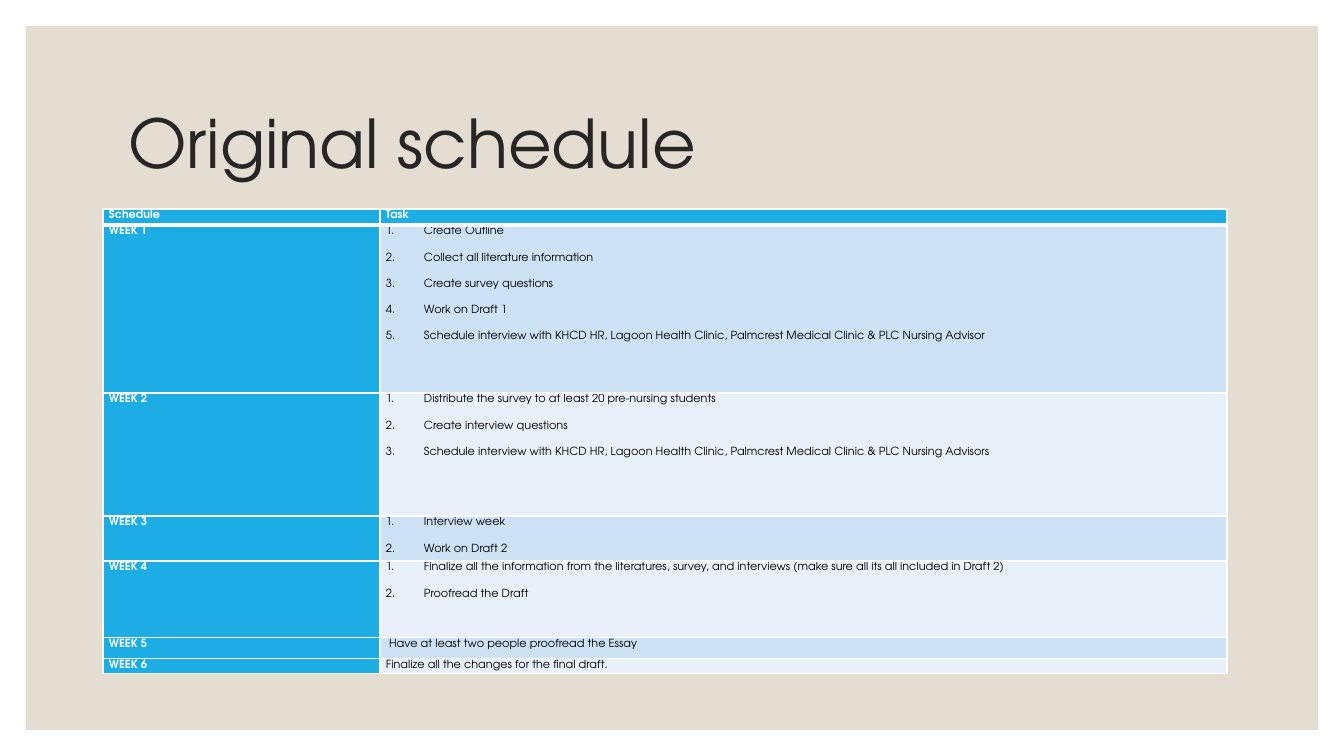
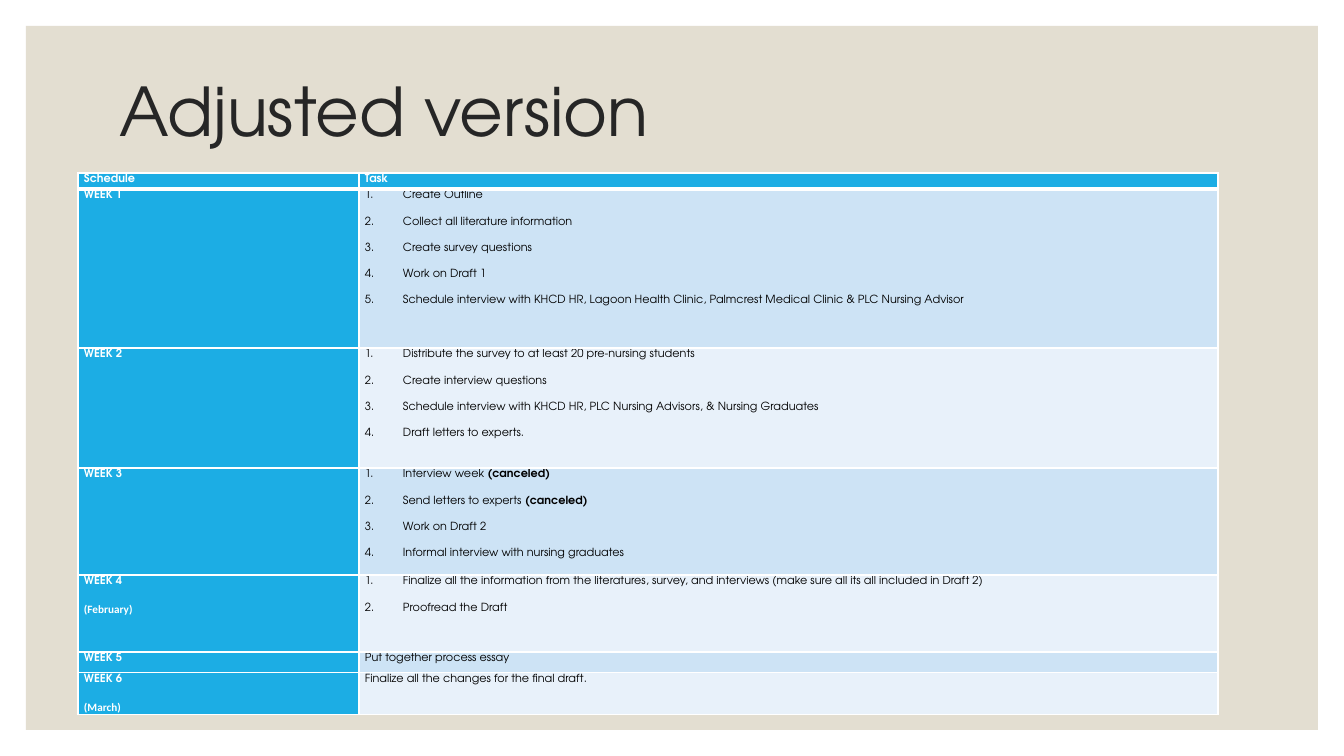
"""Build two slides that show a six-week essay schedule before and after a change."""
from dataclasses import dataclass

from lxml import etree
from pptx import Presentation
from pptx.dml.color import RGBColor
from pptx.enum.shapes import MSO_SHAPE
from pptx.enum.text import MSO_ANCHOR, MSO_AUTO_SIZE, PP_ALIGN
from pptx.oxml.ns import qn
from pptx.util import Pt

RECT = MSO_SHAPE.RECTANGLE
MIDDLE = MSO_ANCHOR.MIDDLE
TOP = MSO_ANCHOR.TOP
LEFT = PP_ALIGN.LEFT
FIXED = MSO_AUTO_SIZE.NONE
TITLE_ONLY = 5
SCALE = 914400 / 100.8


@dataclass(frozen=True)
class Theme:
    """Colours, fonts and type sizes."""
    panel: str = "E3DED1"
    ink: str = "262626"
    text: str = "000000"
    white: str = "FFFFFF"
    head: str = "1CADE4"
    bands: tuple = ("CDE3F5", "E8F1FA")
    face: str = "TeX Gyre Adventor"
    month: str = "Calibri"
    title: int = 48
    body: int = 8
    thin: int = 1
    thick: int = 3


def px(n):
    """Turn pixels into EMU."""
    return round(n * SCALE)


def rgb(code):
    """Turn a hex code into a colour."""
    return RGBColor.from_string(code)


class Deck:
    """Holds the style and the current slide."""

    def __init__(self, theme):
        """Start a presentation with the panel on its layout."""
        self.theme = theme
        self.prs = Presentation()
        self.prs.slide_width, self.prs.slide_height = px(1344), px(756)
        self.layout = self.prs.slide_layouts[TITLE_ONLY]
        self.slide = None
        self.panelled = False

    def page(self):
        """Add a slide."""
        self.slide = self.prs.slides.add_slide(self.layout)
        if not self.panelled:
            self.panel(26, 26, 1292, 704)
            self.panelled = True

    def panel(self, x, y, w, h):
        """Draw the backing panel and move it to the layout."""
        shape = self.slide.shapes.add_shape(RECT, px(x), px(y), px(w), px(h))
        shape.shadow.inherit = False
        shape.fill.solid()
        shape.fill.fore_color.rgb = rgb(self.theme.panel)
        shape.line.fill.background()
        self.layout.shapes.element.insert(2, shape.element)

    def style(self, font, size, color, bold=False, face=None):
        """Format a font."""
        font.name = face or self.theme.face
        font.size = Pt(size)
        font.color.rgb = rgb(color)
        font.bold = bold

    def title(self, text, x, y):
        """Fill and place the title."""
        box = self.slide.shapes.title
        box.left, box.top, box.width, box.height = px(x), px(y), px(1109), px(151)
        frame = box.text_frame
        frame.text = text
        frame.word_wrap = True
        frame.auto_size = FIXED
        frame.vertical_anchor = MIDDLE
        par = frame.paragraphs[0]
        par.alignment = LEFT
        par.line_spacing = 0.9
        self.style(par.font, self.theme.title, self.theme.ink)

    def border(self, cell, top, base):
        """Draw the four white sides of a cell."""
        props = cell._tc.get_or_add_tcPr()
        thin = self.theme.thin
        for tag, width in (("lnL", thin), ("lnR", thin), ("lnT", top), ("lnB", base)):
            line = etree.SubElement(props, qn("a:" + tag), w=str(Pt(width)))
            fill = etree.SubElement(line, qn("a:solidFill"))
            etree.SubElement(fill, qn("a:srgbClr"), val=self.theme.white)

    def number(self, par):
        """Number a paragraph with a hanging indent."""
        props = par._p.get_or_add_pPr()
        props.set("marL", str(px(38)))
        props.set("indent", str(-px(38)))
        etree.SubElement(props, qn("a:buAutoNum"), type="arabicPeriod")

    def words(self, cell, items, color, bold=False, listed=False):
        """Set the paragraphs of a cell, with what follows a | in bold."""
        frame = cell.text_frame
        for i, item in enumerate(items):
            par = frame.add_paragraph() if i else frame.paragraphs[0]
            if listed:
                self.number(par)
            par.line_spacing = 1.15
            par.space_after = Pt(10)
            face = self.theme.month if bold and i else None
            self.style(par.font, self.theme.body, color, bold, face)
            plain, _, strong = item.partition("|")
            par.add_run().text = plain
            if strong:
                run = par.add_run()
                run.text = strong
                run.font.bold = True

    def cell(self, cell, fill, top, base):
        """Set the margins, sides and fill of a cell."""
        cell.margin_left = cell.margin_right = px(6)
        cell.margin_top = cell.margin_bottom = 0
        cell.vertical_anchor = TOP
        self.border(cell, top, base)
        cell.fill.solid()
        cell.fill.fore_color.rgb = rgb(fill)

    def table(self, x, y, cols, highs, weeks):
        """Draw the schedule, one row a week under a header."""
        look = self.theme
        rows = [(["Schedule"], ["Task"])] + weeks
        frame = self.slide.shapes.add_table(
            len(rows), len(cols), px(x), px(y), px(sum(cols)), px(sum(highs)))
        grid = frame.table
        grid.first_col = True
        grid.horz_banding = False
        for col, wide in zip(grid.columns, cols):
            col.width = px(wide)
        for i, (high, (week, tasks)) in enumerate(zip(highs, rows)):
            grid.rows[i].height = px(high)
            top = look.thick if i == 1 else look.thin
            base = look.thin if i else look.thick
            band = look.bands[(i - 1) % 2] if i else look.head
            left, right = grid.cell(i, 0), grid.cell(i, 1)
            self.cell(left, look.head, top, base)
            self.cell(right, band, top, base)
            self.words(left, week, look.white, True)
            self.words(right, tasks, look.text if i else look.white,
                       not i, len(tasks) > 1)


START = (["WEEK 1"], [
    "Create Outline",
    "Collect all literature information",
    "Create survey questions",
    "Work on Draft 1",
    "Schedule interview with KHCD HR, Lagoon Health Clinic, "
    "Palmcrest Medical Clinic & PLC Nursing Advisor",
])
SURVEY = [
    "Distribute the survey to at least 20 pre-nursing students",
    "Create interview questions",
]
REVIEW = [
    "Finalize all the information from the literatures, survey, and interviews "
    "(make sure all its all included in Draft 2)",
    "Proofread the Draft",
]
FINAL = ["Finalize all the changes for the final draft."]

FIRST = [
    START,
    (["WEEK 2"], SURVEY + [
        "Schedule interview with KHCD HR, Lagoon Health Clinic, "
        "Palmcrest Medical Clinic & PLC Nursing Advisors"]),
    (["WEEK 3"], ["Interview week", "Work on Draft 2"]),
    (["WEEK 4"], REVIEW),
    (["WEEK 5"], [" Have at least two people proofread the Essay"]),
    (["WEEK 6"], FINAL),
]
SECOND = [
    START,
    (["WEEK 2"], SURVEY + [
        "Schedule interview with KHCD HR, PLC Nursing Advisors, & Nursing Graduates",
        "Draft letters to experts."]),
    (["WEEK 3"], [
        "Interview week |(canceled)",
        "Send letters to experts |(canceled)",
        "Work on Draft 2",
        "Informal interview with nursing graduates"]),
    (["WEEK 4", "(February)"], REVIEW),
    (["WEEK 5"], ["Put together process essay"]),
    (["WEEK 6", "(March)"], FINAL),
]


def main():
    """Build and save the deck."""
    deck = Deck(Theme())
    deck.page()
    deck.title("Original schedule", 118, 71)
    deck.table(103, 209, (277, 847), (16, 168, 123, 45, 77, 21, 15), FIRST)
    deck.page()
    deck.title("Adjusted version", 109, 39)
    deck.table(78, 173, (281, 859), (16, 159, 120, 107, 77, 21, 42), SECOND)
    deck.prs.save("out.pptx")


if __name__ == "__main__":
    main()
